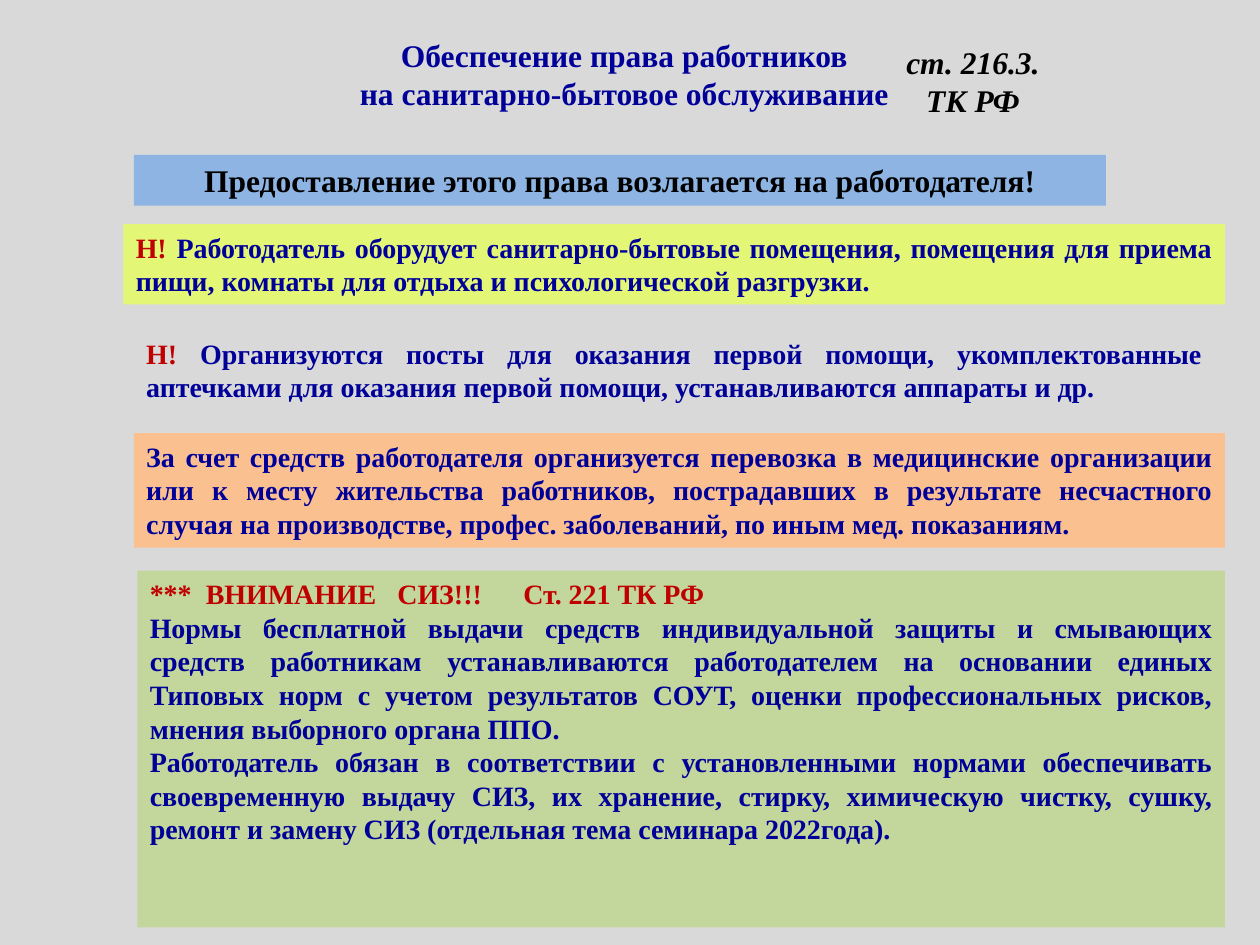
from dataclasses import dataclass

from lxml import etree
from pptx import Presentation
from pptx.dml.color import RGBColor
from pptx.enum import shapes, text
from pptx.oxml import ns
from pptx.util import Pt


@dataclass(frozen=True)
class Theme:
    font: str = "Times New Roman"
    heading: int = 18
    body: int = 16
    page: str = "D9D9D9"
    navy: str = "000099"
    red: str = "C00000"
    black: str = "000000"
    blue: str = "8EB4E3"
    yellow: str = "E4F676"
    orange: str = "FAC090"
    green: str = "C3D69B"


THEME = Theme()
CENTER, JUSTIFY, LEFT = (text.PP_ALIGN.CENTER, text.PP_ALIGN.JUSTIFY,
                         text.PP_ALIGN.LEFT)
TOP, BOTTOM = text.MSO_ANCHOR.TOP, text.MSO_ANCHOR.BOTTOM


def add_panel(slide, box, fill=None, anchor=TOP, inset=7.2):
    """Return the text frame of a filled rectangle, or of a plain text box."""
    place = [Pt(length) for length in box]
    if fill:
        panel = slide.shapes.add_shape(shapes.MSO_SHAPE.RECTANGLE, *place)
        panel.shadow.inherit = False
        panel.fill.solid()
        panel.fill.fore_color.rgb = RGBColor.from_string(fill)
        panel.line.fill.background()
    else:
        panel = slide.shapes.add_textbox(*place)
    frame = panel.text_frame
    frame.word_wrap = True
    frame.vertical_anchor = anchor
    frame.margin_left = Pt(inset)
    return frame


def write(frame, *parts, size=THEME.body, align=JUSTIFY, italic=False, tabs=()):
    """Add one paragraph made of (wording, colour) parts."""
    first = frame.paragraphs[0]
    paragraph = frame.add_paragraph() if first.runs else first
    paragraph.alignment = align
    if tabs:
        stops = etree.SubElement(paragraph._p.get_or_add_pPr(), ns.qn("a:tabLst"))
        for stop in tabs:
            etree.SubElement(stops, ns.qn("a:tab"), pos=str(Pt(stop)), algn="l")
    for wording, colour in parts:
        run = paragraph.add_run()
        run.text = wording
        run.font.name = THEME.font
        run.font.size = Pt(size)
        run.font.bold = True
        run.font.italic = italic
        run.font.color.rgb = RGBColor.from_string(colour)


def add_title(slide, box):
    frame = add_panel(slide, box, inset=34.6)
    for line in ("Обеспечение права работников", "на санитарно-бытовое обслуживание"):
        write(frame, (line, THEME.navy), size=THEME.heading, align=CENTER)


def add_article(slide, box):
    frame = add_panel(slide, box)
    for line in ("ст. 216.3.", "ТК РФ"):
        write(frame, (line, THEME.black), size=THEME.heading, align=CENTER, italic=True)


def add_duty_banner(slide, box):
    write(add_panel(slide, box, THEME.blue),
          ("Предоставление этого права возлагается на работодателя!", THEME.black),
          size=THEME.heading, align=CENTER)


def add_new_rule(slide, box, wording, **panel_format):
    """Place a rule marked as new with a red Н!"""
    write(add_panel(slide, box, **panel_format),
          ("Н! ", THEME.red), (wording, THEME.navy))


def add_transport(slide, box):
    write(add_panel(slide, box, THEME.orange),
          ("За счет средств работодателя организуется перевозка в медицинские "
           "организации или к месту жительства работников, пострадавших в результате "
           "несчастного случая на производстве, профес. заболеваний, по иным мед. "
           "показаниям.", THEME.navy))


def add_protective_gear(slide, box):
    frame = add_panel(slide, box, THEME.green)
    write(frame, ("***\tВНИМАНИЕ\tСИЗ!!!\tСт. 221 ТК РФ", THEME.red),
          align=LEFT, tabs=(32, 141.5, 213.5))
    for wording in (
        "Нормы бесплатной выдачи средств индивидуальной защиты и смывающих средств "
        "работникам устанавливаются работодателем на основании единых Типовых норм с "
        "учетом результатов СОУТ, оценки профессиональных рисков, мнения выборного "
        "органа ППО.",
        "Работодатель обязан в соответствии с установленными нормами обеспечивать "
        "своевременную выдачу СИЗ, их хранение, стирку, химическую чистку, сушку, "
        "ремонт и замену СИЗ (отдельная тема семинара 2022года).",
    ):
        write(frame, (wording, THEME.navy))


def main():
    deck = Presentation()
    deck.slide_width, deck.slide_height = Pt(720), Pt(540)
    slide = deck.slides.add_slide(deck.slide_layouts[6])
    slide.background.fill.solid()
    slide.background.fill.fore_color.rgb = RGBColor.from_string(THEME.page)

    left, right = 76.5, 700
    add_title(slide, (161.5, 17, 363, 71))
    add_article(slide, (502, 21, 108, 51))
    add_duty_banner(slide, (left, 88.5, 555.5, 29))
    add_new_rule(slide, (70.5, 128, right - 70.5, 46),
                 "Работодатель оборудует санитарно-бытовые помещения, помещения для "
                 "приема пищи, комнаты для отдыха и психологической разгрузки.",
                 fill=THEME.yellow)
    add_new_rule(slide, (left, 168.5, 617.5, 65.5),
                 "Организуются посты для оказания первой помощи, укомплектованные "
                 "аптечками для оказания первой помощи, устанавливаются аппараты и др.",
                 anchor=BOTTOM)
    add_transport(slide, (left, 247.5, right - left, 65.5))
    add_protective_gear(slide, (78.5, 326, right - 78.5, 204))
    deck.save("out.pptx")


if __name__ == "__main__":
    main()
